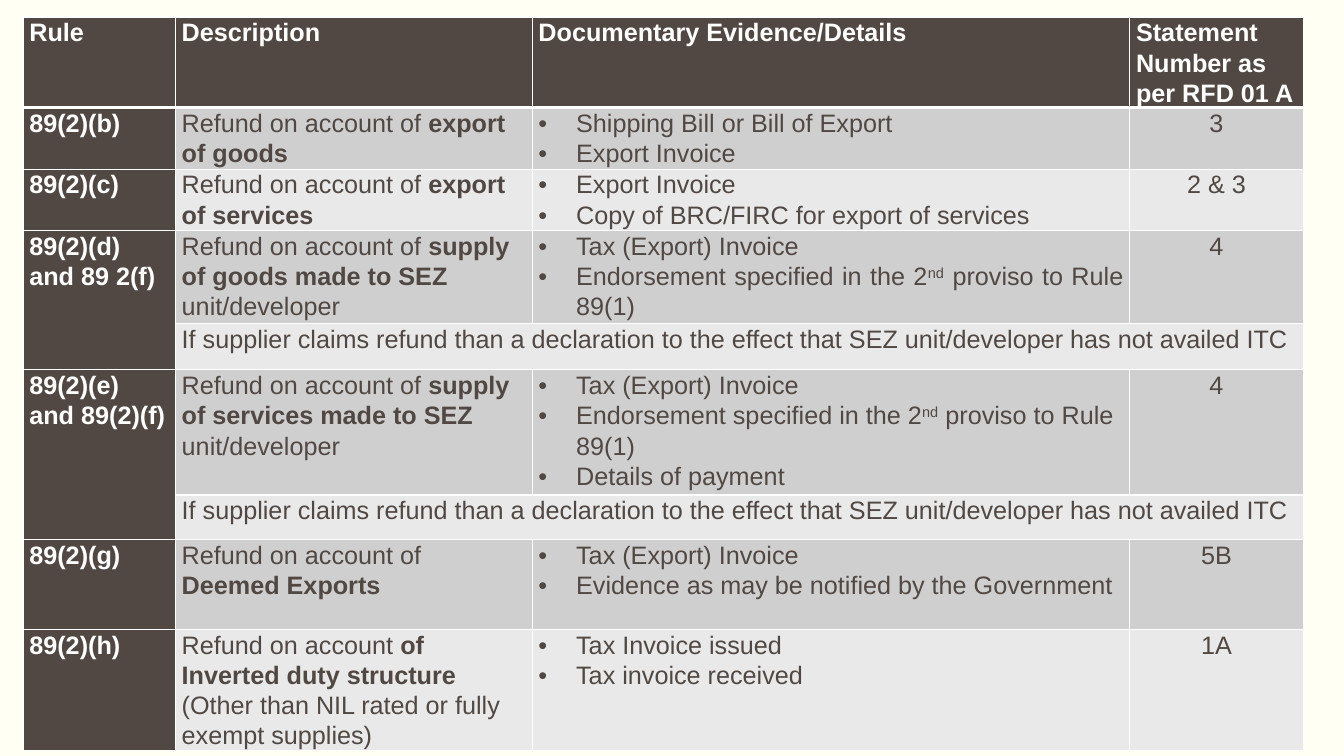
"""Build a slide with a table of GST refund rules, evidence and statement numbers."""
from lxml.etree import SubElement
from pptx import Presentation
from pptx.dml.color import RGBColor
from pptx.enum.text import PP_ALIGN as Align
from pptx.oxml.ns import qn
from pptx.util import Cm, Pt

PLAIN, BOLD, SUPER = "plain", "bold", "super"
BROWN, WHITE, IVORY = "514843", "FFFFFF", "FFFFF3"
BANDS = ["E9E9E9", "D0CFCF"]

HEADINGS = ["Rule", "Description", "Documentary Evidence/Details",
            "Statement Number as per RFD 01 A"]
ACCOUNT = ("Refund on account of ", PLAIN)
UNIT = ("unit/developer", PLAIN)
TAX_EXPORT = [("Tax (Export) Invoice", PLAIN)]
ENDORSEMENT = [("Endorsement specified in the 2", PLAIN), ("nd", SUPER),
               (" proviso to Rule 89(1)", PLAIN)]
DECLARATION = ("If supplier claims refund than a declaration to the effect that "
               "SEZ unit/developer has not availed ITC")

REFUNDS = [
    ("89(2)(b)", [ACCOUNT, ("export of goods", BOLD)],
     [[("Shipping Bill or Bill of Export", PLAIN)], [("Export Invoice", PLAIN)]], "3"),
    ("89(2)(c)", [ACCOUNT, ("export of services", BOLD)],
     [[("Export Invoice", PLAIN)],
      [("Copy of BRC/FIRC for export of services", PLAIN)]], "2 & 3"),
    ("89(2)(d) and 89 2(f)",
     [ACCOUNT, ("supply of goods made to SEZ ", BOLD), UNIT],
     [TAX_EXPORT, ENDORSEMENT], "4"),
    DECLARATION,
    ("89(2)(e) and 89(2)(f)",
     [ACCOUNT, ("supply of services made to SEZ ", BOLD), UNIT],
     [TAX_EXPORT, ENDORSEMENT, [("Details of payment", PLAIN)]], "4"),
    DECLARATION,
    ("89(2)(g)", [ACCOUNT, ("Deemed Exports", BOLD)],
     [TAX_EXPORT, [("Evidence as may be notified by the Government", PLAIN)]], "5B"),
    ("89(2)(h)",
     [("Refund on account ", PLAIN), ("of Inverted duty structure ", BOLD),
      ("(Other than NIL rated or fully exempt supplies)", PLAIN)],
     [[("Tax Invoice issued", PLAIN)], [("Tax invoice received", PLAIN)]], "1A"),
]
COLUMN_WIDTHS = [3.84, 8.99, 15.06, 4.37]
ROW_HEIGHTS = [2.16, 1.55, 1.55, 2.34, 1.17, 3.15, 1.12, 2.27, 3.05]
LEFT, TOP = 0.58, 0.43
JUSTIFIED_ROWS = 3
INDENT = 0.95


def paint(fill, colour):
    fill.solid()
    fill.fore_color.rgb = RGBColor.from_string(colour)


def add_bullet(paragraph):
    properties = paragraph._p.get_or_add_pPr()
    properties.set("marL", str(Cm(INDENT)))
    properties.set("indent", str(-Cm(INDENT)))
    SubElement(properties, qn("a:buFont"), typeface="Arial")
    SubElement(properties, qn("a:buChar"), char="•")


def write(cell, paragraphs, colour=BROWN, align=Align.LEFT, bulleted=False):
    frame = cell.text_frame
    for index, runs in enumerate(paragraphs):
        paragraph = frame.add_paragraph() if index else frame.paragraphs[0]
        paragraph.alignment = align
        paragraph.line_spacing = 1.07
        if bulleted:
            add_bullet(paragraph)
        for text, style in runs:
            run = paragraph.add_run()
            run.text = text
            run.font.name = "Arial"
            run.font.size = Pt(18)
            run.font.bold = style == BOLD
            run.font.color.rgb = RGBColor.from_string(colour)
            if style == SUPER:
                run._r.get_or_add_rPr().set("baseline", "30000")


def format_cell(cell, row, column):
    cell.margin_left = cell.margin_right = Cm(0.16)
    cell.margin_top = cell.margin_bottom = 0
    properties = cell._tc.get_or_add_tcPr()
    for side in "LRTB":
        under_header = (row, side) in [(0, "B"), (1, "T")]
        line = SubElement(properties, qn(f"a:ln{side}"), w=str(Pt(3 if under_header else 1)))
        SubElement(SubElement(line, qn("a:solidFill")), qn("a:srgbClr"), val=WHITE)
    paint(cell.fill, BROWN if row == 0 or column == 0 else BANDS[row % 2])


def main():
    deck = Presentation()
    deck.slide_width, deck.slide_height = Cm(33.87), Cm(19.05)
    slide = deck.slides.add_slide(deck.slide_layouts[6])
    paint(slide.background.fill, IVORY)

    table = slide.shapes.add_table(
        len(ROW_HEIGHTS), len(COLUMN_WIDTHS), Cm(LEFT), Cm(TOP),
        Cm(sum(COLUMN_WIDTHS)), Cm(sum(ROW_HEIGHTS))).table
    table.horz_banding = False
    for column, width in zip(table.columns, COLUMN_WIDTHS):
        column.width = Cm(width)
    for row, height in enumerate(ROW_HEIGHTS):
        table.rows[row].height = Cm(height)
        for column in range(len(COLUMN_WIDTHS)):
            format_cell(table.cell(row, column), row, column)

    for column, heading in enumerate(HEADINGS):
        write(table.cell(0, column), [[(heading, BOLD)]], WHITE)
    for row, refund in enumerate(REFUNDS, 1):
        if refund == DECLARATION:
            table.cell(row - 1, 0).merge(table.cell(row, 0))
            table.cell(row, 1).merge(table.cell(row, 3))
            write(table.cell(row, 1), [[(refund, PLAIN)]])
            continue
        rule, description, evidence, statement = refund
        evidence_align = Align.JUSTIFY if row <= JUSTIFIED_ROWS else Align.LEFT
        write(table.cell(row, 0), [[(rule, BOLD)]], WHITE)
        write(table.cell(row, 1), [description])
        write(table.cell(row, 2), evidence, align=evidence_align, bulleted=True)
        write(table.cell(row, 3), [[(statement, PLAIN)]], align=Align.CENTER)

    deck.save("out.pptx")


if __name__ == "__main__":
    main()
